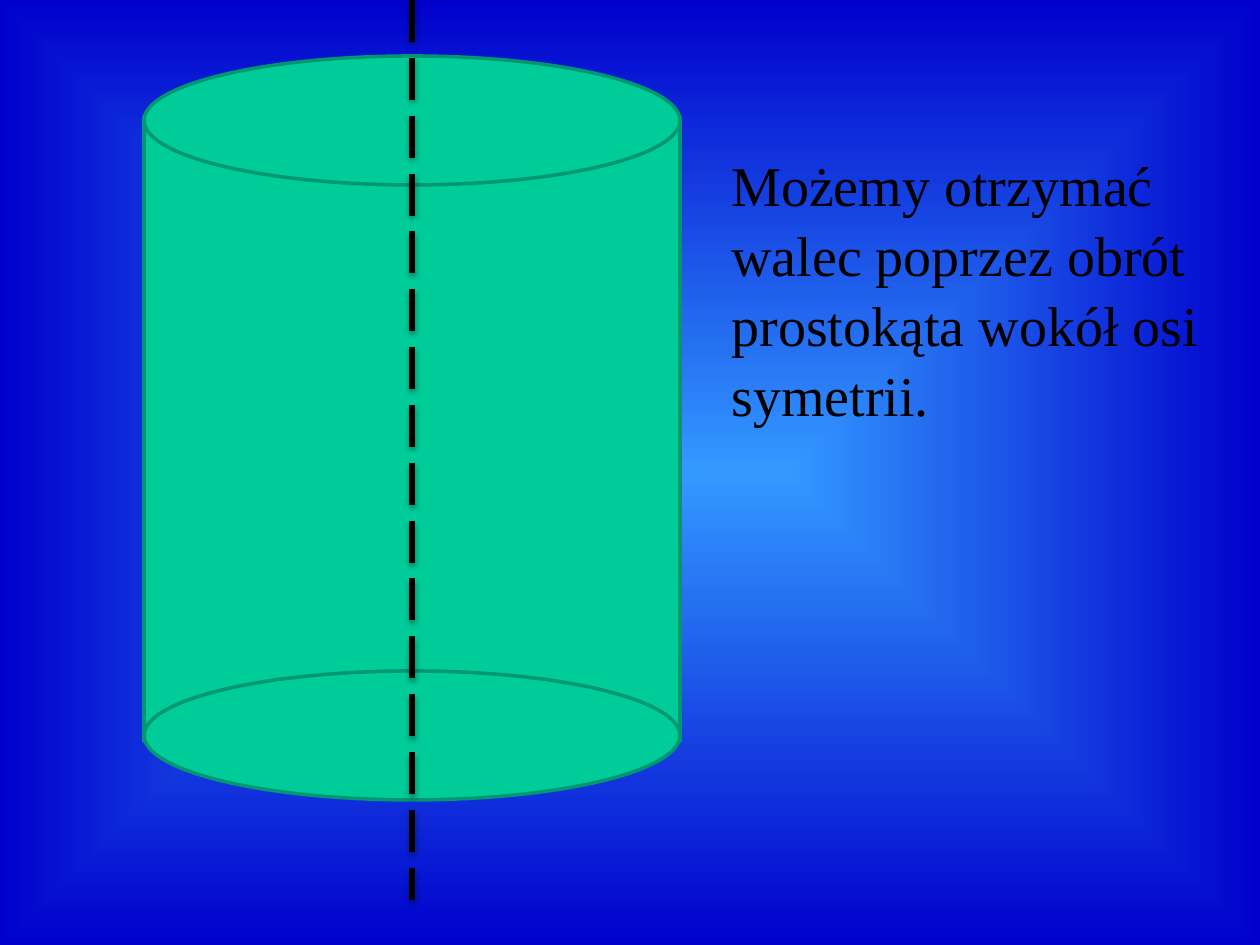
from lxml import etree
from pptx import Presentation
from pptx.dml.color import RGBColor
from pptx.enum.dml import MSO_LINE
from pptx.enum.shapes import MSO_CONNECTOR, MSO_SHAPE
from pptx.enum.text import MSO_ANCHOR
from pptx.oxml import parse_xml
from pptx.oxml.ns import nsdecls, qn
from pptx.util import Pt

PX = 914400 // 126
RECT, OVAL = MSO_SHAPE.RECTANGLE, MSO_SHAPE.OVAL
STRAIGHT = MSO_CONNECTOR.STRAIGHT
DASH = MSO_LINE.LONG_DASH
MIDDLE = MSO_ANCHOR.MIDDLE

SKY = RGBColor(0x33, 0x99, 0xFF)
NAVY = RGBColor(0x00, 0x00, 0xCC)
GREEN = RGBColor(0x00, 0xCC, 0x99)
EDGE = RGBColor(0x00, 0x97, 0x71)
BLACK = RGBColor(0x00, 0x00, 0x00)

prs = Presentation()
prs.slide_width, prs.slide_height = 1260 * PX, 945 * PX
slide = prs.slides.add_slide(prs.slide_layouts[6])
shapes = slide.shapes

# Background: gradient spreading from the centre
fill = slide.background.fill
fill.gradient()
for stop, color, place in zip(fill.gradient_stops, (SKY, NAVY), (0, 1)):
    stop.color.rgb = color
    stop.position = place
grad = slide.background._cSld.find(".//" + qn("a:gradFill"))
lin = grad.find(qn("a:lin"))
grad.replace(lin, parse_xml(
    f'<a:path {nsdecls("a")} path="shape">'
    '<a:fillToRect l="50000" t="50000" r="50000" b="50000"/></a:path>'))

# Cylinder: body, then top and bottom bases
left, wide, tall = 144, 536, 129
top, base = 56, 671
body = (RECT, top + tall // 2 - 4, base - top + 10)
for kind, y, high in (body, (OVAL, top, tall), (OVAL, base, tall)):
    part = shapes.add_shape(kind, left * PX, y * PX, wide * PX, high * PX)
    part.shadow.inherit = False
    part.fill.solid()
    part.fill.fore_color.rgb = GREEN
    part.line.color.rgb = EDGE
    part.line.width = Pt(2)

# Caption
box = shapes.add_textbox(719 * PX, 145 * PX, 496 * PX, 285 * PX)
frame = box.text_frame
frame.word_wrap = True
frame.vertical_anchor = MIDDLE
para = frame.paragraphs[0]
para.line_spacing = 1.04
run = para.add_run()
run.text = "Możemy otrzymać walec poprzez obrót prostokąta wokół osi symetrii."
run.font.name = "Times New Roman"
run.font.size = Pt(32)
run.font.color.rgb = BLACK

# Axis of symmetry with a soft shadow
mid = left + wide // 2
axis = shapes.add_connector(STRAIGHT, mid * PX, 0, mid * PX, 900 * PX)
axis.line.color.rgb = BLACK
axis.line.width = Pt(3)
axis.line.dash_style = DASH
effects = etree.SubElement(axis._element.spPr, qn("a:effectLst"))
effects.append(parse_xml(
    f'<a:outerShdw {nsdecls("a")} blurRad="40000" dist="23000" dir="5400000" '
    'rotWithShape="0"><a:srgbClr val="000000"><a:alpha val="35000"/>'
    '</a:srgbClr></a:outerShdw>'))

prs.save("out.pptx")
